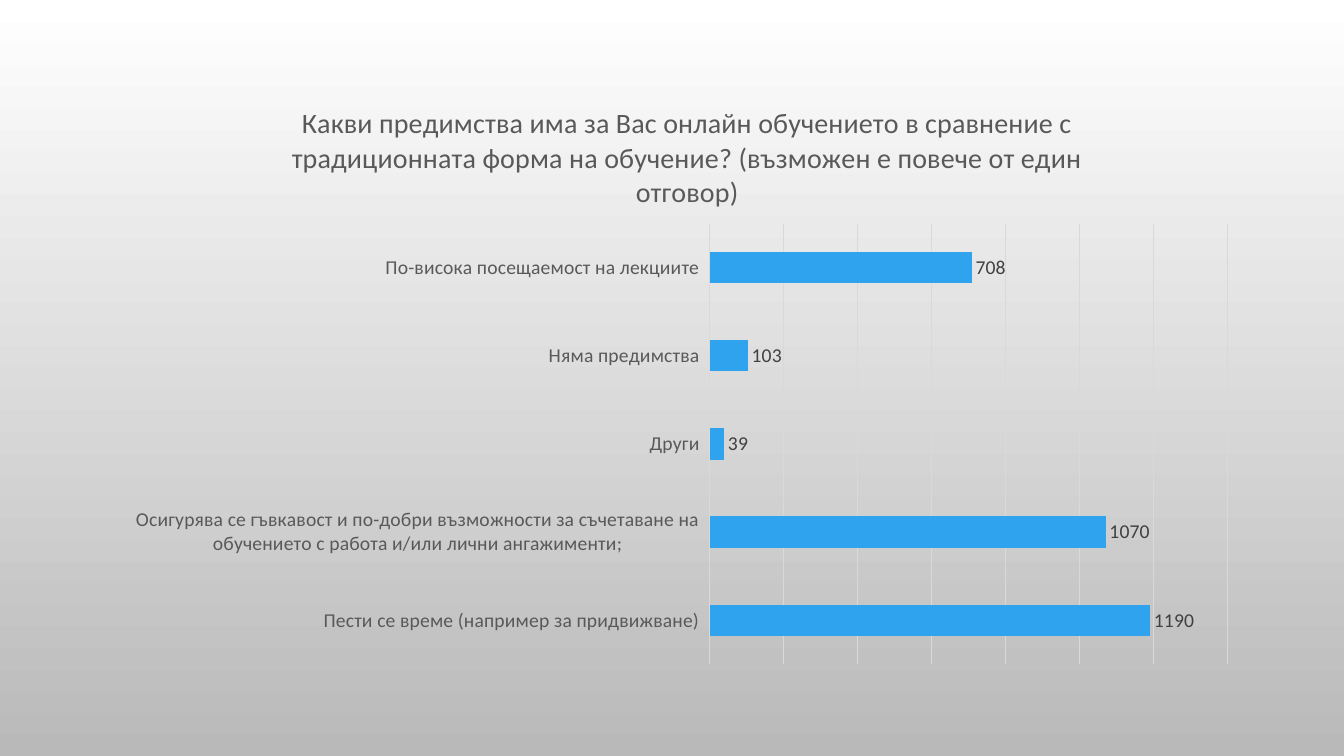
from lxml.etree import SubElement
from pptx import Presentation
from pptx.chart.data import CategoryChartData
from pptx.dml.color import RGBColor
from pptx.enum.chart import XL_CHART_TYPE, XL_LABEL_POSITION, XL_TICK_LABEL_POSITION, XL_TICK_MARK
from pptx.oxml.ns import qn
from pptx.util import Inches, Pt

COLORS = {
    "top": "FFFFFF",
    "bottom": "B9B9B9",
    "bar": "2FA3EE",
    "text": "595959",
    "value": "404040",
    "grid": "D9D9D9",
}
FONT = "Calibri"
QUESTION = (
    "Какви предимства има за Вас онлайн обучението в сравнение с "
    "традиционната форма на обучение? (възможен е повече от един отговор)"
)
ANSWERS = {
    "Пести се време (например за придвижване)": 1190,
    "Осигурява се гъвкавост и по-добри възможности за съчетаване на "
    "обучението с работа и/или лични ангажименти;": 1070,
    "Други": 39,
    "Няма предимства": 103,
    "По-висока посещаемост на лекциите": 708,
}
PLOT_LAYOUT = {
    "layoutTarget": "inner",
    "xMode": "edge",
    "yMode": "edge",
    "x": "0.52",
    "y": "0.24",
    "w": "0.46",
    "h": "0.74",
}


def rgb(name):
    return RGBColor.from_string(COLORS[name])


def style_font(font, size, color):
    font.name = FONT
    font.size = Pt(size)
    font.bold = False
    font.color.rgb = rgb(color)


def style_line(line):
    line.color.rgb = rgb("grid")
    line.width = Pt(0.75)


def paint_background(slide):
    fill = slide.background.fill
    fill.gradient()
    fill.gradient_angle = 270
    for stop, position, color in zip(fill.gradient_stops, (0, 1), ("top", "bottom")):
        stop.position = position
        stop.color.rgb = rgb(color)


def add_question(chart):
    chart.has_title = True
    chart.chart_title.include_in_layout = False
    paragraph = chart.chart_title.text_frame.paragraphs[0]
    paragraph.text = QUESTION
    style_font(paragraph.runs[0].font, 20, "text")


def format_axes(chart):
    answers = chart.category_axis
    answers.major_tick_mark = XL_TICK_MARK.NONE
    answers.tick_label_position = XL_TICK_LABEL_POSITION.LOW
    style_font(answers.tick_labels.font, 14, "text")
    style_line(answers.format.line)

    votes = chart.value_axis
    votes.visible = False
    votes.minimum_scale = 0
    votes.maximum_scale = 1400
    votes.major_unit = 200
    votes.has_major_gridlines = True
    style_line(votes.major_gridlines.format.line)


def format_bars(plot):
    plot.gap_width = 182
    plot.vary_by_categories = False
    bars = plot.series[0]
    bars.format.fill.solid()
    bars.format.fill.fore_color.rgb = rgb("bar")
    labels = bars.data_labels
    labels.show_value = True
    labels.position = XL_LABEL_POSITION.OUTSIDE_END
    style_font(labels.font, 14, "value")


def place_plot(chart):
    plot_area = chart.element.find(".//" + qn("c:plotArea"))
    layout = plot_area.find(qn("c:layout"))
    if layout is None:
        layout = SubElement(plot_area, qn("c:layout"))
        plot_area.insert(0, layout)
    manual = SubElement(layout, qn("c:manualLayout"))
    for key, value in PLOT_LAYOUT.items():
        SubElement(manual, qn("c:" + key)).set("val", value)


def add_answers_chart(slide):
    data = CategoryChartData()
    data.categories = list(ANSWERS)
    data.add_series("Series 1", list(ANSWERS.values()))
    chart = slide.shapes.add_chart(
        XL_CHART_TYPE.BAR_CLUSTERED,
        Inches(1.23), Inches(0.8), Inches(11.17), Inches(5.91), data,
    ).chart
    chart.has_legend = False
    chart.font.name = FONT
    chart.font.size = Pt(10)
    add_question(chart)
    format_axes(chart)
    format_bars(chart.plots[0])
    place_plot(chart)


def main():
    presentation = Presentation()
    presentation.slide_width = Inches(13.33)
    presentation.slide_height = Inches(7.5)
    slide = presentation.slides.add_slide(presentation.slide_layouts[6])
    paint_background(slide)
    add_answers_chart(slide)
    presentation.save("out.pptx")


if __name__ == "__main__":
    main()
